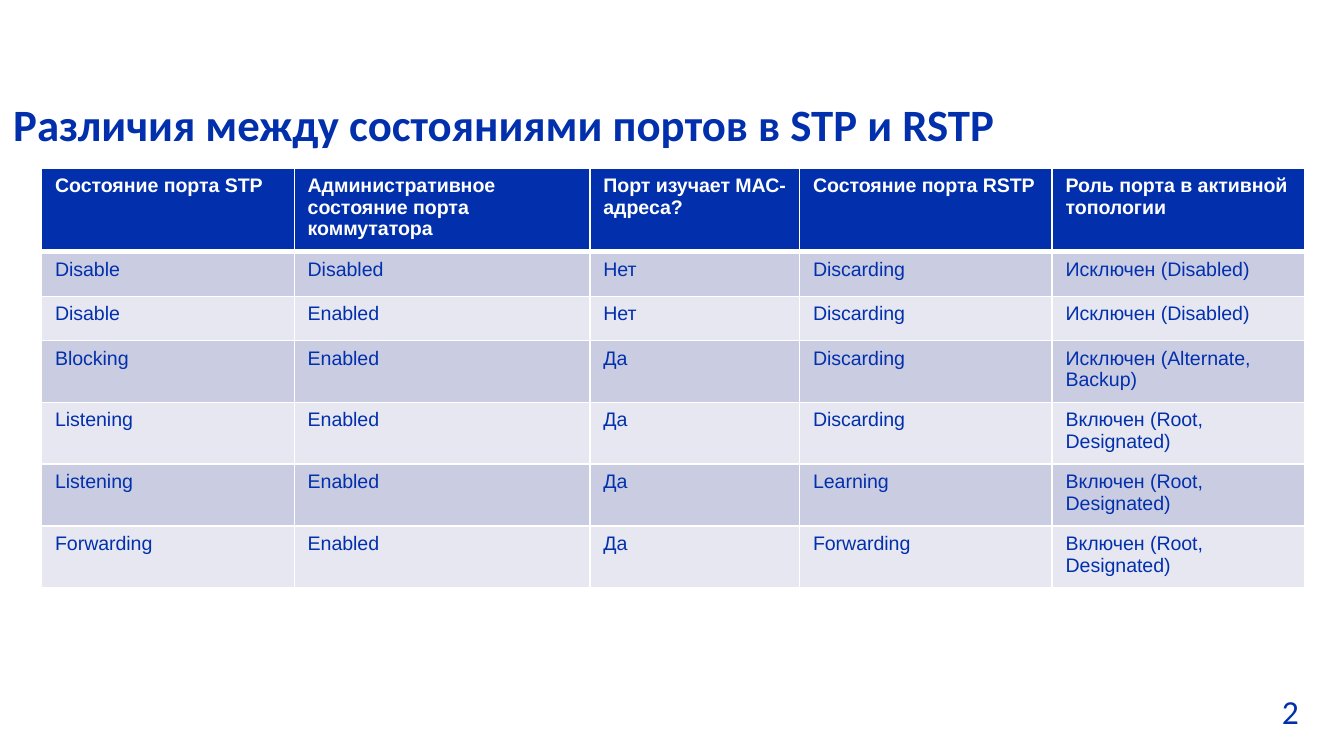
"""Build a slide comparing STP and RSTP port states."""
import lxml.etree
import pptx
import pptx.dml.color
import pptx.enum.text
import pptx.oxml.ns
import pptx.util

SLIDE_WIDTH = 10
SLIDE_HEIGHT = SLIDE_WIDTH * 9 / 16
COLORS = {"blue": "0230AC", "white": "FFFFFF", "band_dark": "CACCE2", "band_light": "E6E7F1"}
TITLE_BOX = (0, 0.67, 9.18, 0.98)
TABLE_BOX = (0.31, 1.25, 9.4, 3.1)
NUMBER_BOX = (9.44, 5.09, 0.27, 0.4)
COLUMN_SHARES = (1.88, 2.2, 1.56, 1.88, 1.88)
ROW_SHARES = (0.6, 0.33, 0.33, 0.46, 0.46, 0.46, 0.46)
PORT_STATES = (
    ("Состояние порта STP", "Административное состояние порта коммутатора",
     "Порт изучает МАС-адреса?", "Состояние порта RSTP", "Роль порта в активной топологии"),
    ("Disable", "Disabled", "Нет", "Discarding", "Исключен (Disabled)"),
    ("Disable", "Enabled", "Нет", "Discarding", "Исключен (Disabled)"),
    ("Blocking", "Enabled", "Да", "Discarding", "Исключен (Alternate, Backup)"),
    ("Listening", "Enabled", "Да", "Discarding", "Включен (Root, Designated)"),
    ("Listening", "Enabled", "Да", "Learning", "Включен (Root, Designated)"),
    ("Forwarding", "Enabled", "Да", "Forwarding", "Включен (Root, Designated)"),
)


def color(name):
    """Return the named colour."""
    return pptx.dml.color.RGBColor.from_string(COLORS[name])


def style_font(font, name, size, color_name, bold):
    """Set the typeface, size, colour and weight of a font."""
    font.name, font.size, font.bold = name, pptx.util.Pt(size), bold
    font.color.rgb = color(color_name)


def set_borders(cell, top, bottom):
    """Draw white borders round a cell, with the given top and bottom widths."""
    properties = cell._tc.get_or_add_tcPr()
    sides = {"lnL": 1, "lnR": 1, "lnT": top, "lnB": bottom}
    for index, (side, width) in enumerate(sides.items()):
        line = lxml.etree.Element(pptx.oxml.ns.qn(f"a:{side}"), w=str(pptx.util.Pt(width)))
        fill = lxml.etree.SubElement(line, pptx.oxml.ns.qn("a:solidFill"))
        lxml.etree.SubElement(fill, pptx.oxml.ns.qn("a:srgbClr"), val=COLORS["white"])
        properties.insert(index, line)


def add_label(slide, box, text, size, bold):
    """Add a blue line of text in the given box."""
    shape = slide.shapes.add_textbox(*map(pptx.util.Inches, box))
    frame = shape.text_frame
    frame.word_wrap = True
    frame.auto_size = pptx.enum.text.MSO_AUTO_SIZE.SHAPE_TO_FIT_TEXT
    frame.text = text
    style_font(frame.paragraphs[0].font, "Calibri", size, "blue", bold)


def add_state_table(slide, box, rows):
    """Add the banded table of port states, sharing the box among columns and rows."""
    shape = slide.shapes.add_table(len(rows), len(rows[0]), *map(pptx.util.Inches, box))
    table = shape.table
    for column, share in zip(table.columns, COLUMN_SHARES):
        column.width = pptx.util.Inches(box[2] * share / sum(COLUMN_SHARES))
    for row, share in zip(table.rows, ROW_SHARES):
        row.height = pptx.util.Inches(box[3] * share / sum(ROW_SHARES))
    for row_index, texts in enumerate(rows):
        header = row_index == 0
        band = "blue" if header else "band_dark" if row_index % 2 else "band_light"
        for column_index, text in enumerate(texts):
            cell = table.cell(row_index, column_index)
            cell.text = text
            cell.fill.solid()
            cell.fill.fore_color.rgb = color(band)
            style_font(cell.text_frame.paragraphs[0].font, "Arial", 10.5,
                       "white" if header else "blue", header)
            set_borders(cell, top=3 if row_index == 1 else 1, bottom=3 if header else 1)


def main():
    """Build and save the presentation."""
    presentation = pptx.Presentation()
    presentation.slide_width = pptx.util.Inches(SLIDE_WIDTH)
    presentation.slide_height = pptx.util.Inches(SLIDE_HEIGHT)
    slide = presentation.slides.add_slide(presentation.slide_layouts[6])
    add_label(slide, NUMBER_BOX, "2", 18, False)
    add_label(slide, TITLE_BOX, "Различия между состояниями портов в STP и RSTP", 24, True)
    add_state_table(slide, TABLE_BOX, PORT_STATES)
    presentation.save("out.pptx")


if __name__ == "__main__":
    main()
